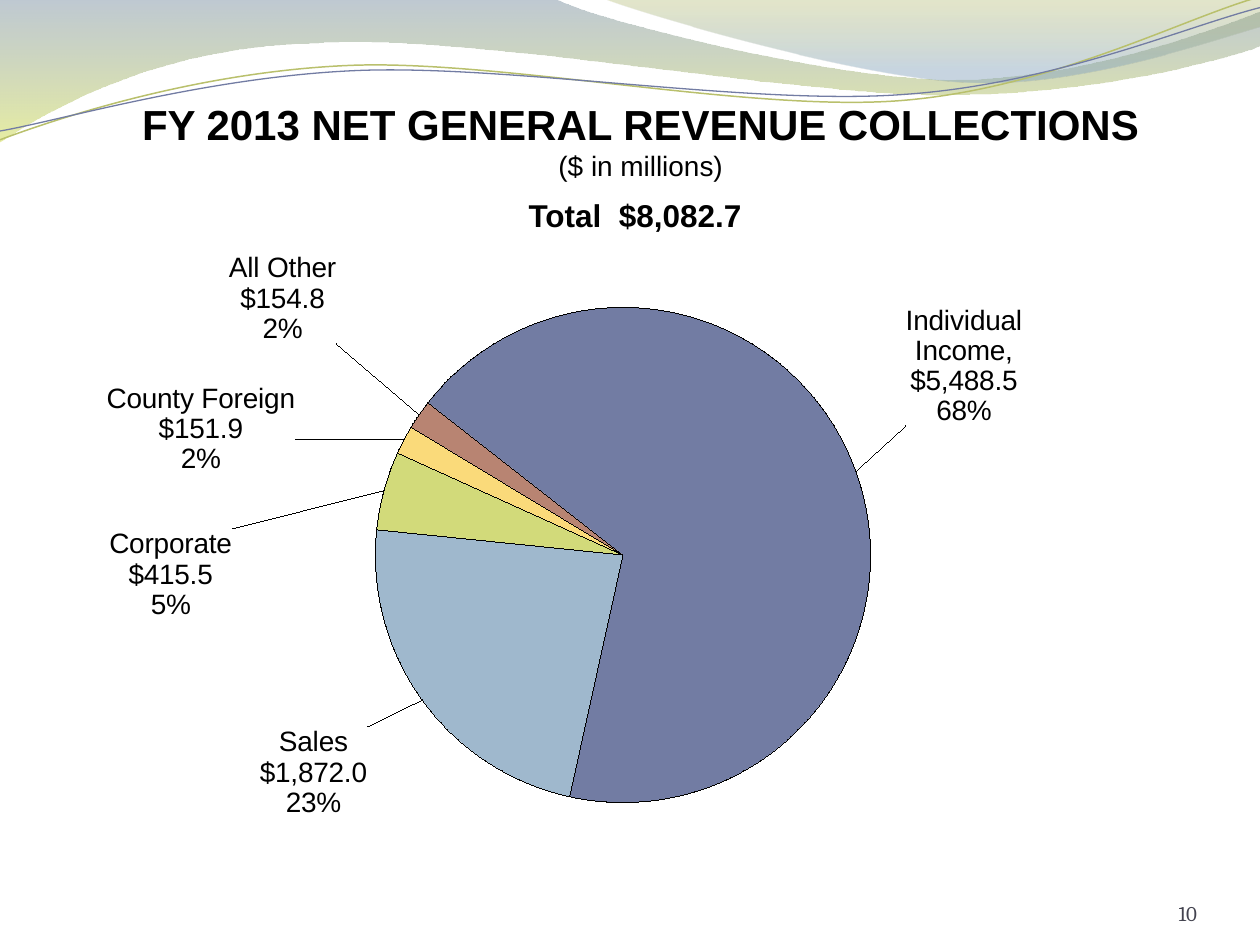
from math import cos, radians, sin

from lxml import etree
from pptx import Presentation
from pptx.chart.data import CategoryChartData as ChartData
from pptx.dml.color import RGBColor as RGB
from pptx.enum.chart import XL_CHART_TYPE as Kind, XL_LABEL_POSITION as Spot
from pptx.enum.text import MSO_ANCHOR as Anchor, MSO_AUTO_SIZE as Fit, PP_ALIGN as Align
from pptx.oxml import parse_xml
from pptx.oxml.ns import nsdecls, qn
from pptx.util import Inches, Pt

HEX = {
    "black": "000000", "page": "43434F",
    "slate": "72889B", "lime": "D3DE57", "olive": "A4AC50", "sky": "84A3BD",
    "moss": "B9C06C", "indigo": "727CA3", "blue": "9FB8CD",
    "green": "D2DA7A", "gold": "FADA7A", "rust": "B88472",
}

# Category, value, slice colour, label lines, label shift in inches
SLICES = [
    ("Individual Income", 5488.5, "indigo",
     ["Individual", "Income,", "$5,488.5", "68%"], (0.34, -0.34)),
    ("Sales", 1872.0, "blue", ["Sales", "$1,872.0", "23%"], (-0.39, 0.18)),
    ("Corporate", 415.5, "green", ["Corporate", "$415.5", "5%"], (-1.15, 1.04)),
    ("County Foreign", 151.9, "gold",
     ["County Foreign", "$151.9", "2%"], (-0.81, 0.3)),
    ("All Other", 154.8, "rust", ["All Other", "$154.8", "2%"], (-0.61, -0.53)),
]

# A pair is a corner; six numbers are a curve's two handles and its end
WAVE = [(0, 0), (4.4, -0.01), (4.76, 0.17, 6.64, 0.63, 7.58, 0.63),
        (8.53, 0.63, 9.58, 0.26, 10, 0.09), (10.01, 0.36),
        (9.83, 0.44, 8.7, 0.76, 7.46, 0.75), (6.22, 0.75, 3.82, 0.28, 2.57, 0.34),
        (1.29, 0.36, 0.46, 0.83, -0.01, 1.13), (0, 0)]
CREST = [(4.79, -0.01), (5.09, 0.11, 6.82, 0.62, 7.69, 0.65),
         (8.56, 0.69, 9.61, 0.32, 10, 0.21), (10, 0), (4.79, -0.01)]
UPPER = [(0, 1.11), (0.48, 0.93, 1.58, 0.57, 2.77, 0.52),
         (3.95, 0.47, 5.93, 0.89, 7.13, 0.8), (8.33, 0.71, 9.38, 0.15, 9.98, -0.02)]
LOWER = [(0, 1.04), (0.47, 0.96, 1.64, 0.61, 2.83, 0.56),
         (4.03, 0.51, 5.97, 0.84, 7.17, 0.75), (8.36, 0.67, 9.41, 0.21, 10, 0.06)]
TILT = -2.7


def rgb(name):
    return RGB.from_string(HEX[name])


def write(para, text, size=16, color="black", font="Arial", bold=False,
          align=Align.CENTER):
    para.alignment = align
    run = para.add_run()
    run.text = text
    face = run.font
    face.size, face.name, face.bold = Pt(size), font, bold
    face.color.rgb = rgb(color)


def place(shape, box):
    shape.left, shape.top, shape.width, shape.height = map(Inches, box)


def outline(shapes, box, steps, close=False, turn=0):
    """Draw corners and curves in box; turn is the shape's own rotation."""
    left, top, wide, high = box
    pen = shapes.build_freeform(Inches(left), Inches(top))
    pen.add_line_segments([(Inches(left + wide), Inches(top)),
                           (Inches(left + wide), Inches(top + high))], close=close)
    shape = pen.convert_to_shape()
    shape.shadow.inherit = False
    shape.rotation = turn % 360
    c, s = cos(radians(-turn)), sin(radians(-turn))

    def local(x, y):
        dx, dy = x - left - wide / 2, y - top - high / 2
        return Inches(dx * c - dy * s + wide / 2), Inches(dx * s + dy * c + high / 2)

    track = next(shape._element.iter(qn("a:path")))
    for old in list(track):
        track.remove(old)
    for i, step in enumerate(steps):
        tag = "a:cubicBezTo" if len(step) == 6 else "a:lnTo" if i else "a:moveTo"
        node = etree.SubElement(track, qn(tag))
        for x, y in zip(step[::2], step[1::2]):
            px, py = local(x, y)
            etree.SubElement(node, qn("a:pt"), x=str(px), y=str(py))
    if close:
        etree.SubElement(track, qn("a:close"))
    return shape


def band(shapes, box, steps, stops):
    """Draw a closed shape with a see-through gradient from top to bottom."""
    shape = outline(shapes, box, steps, close=True)
    shape.line.fill.background()
    shape.fill.gradient()
    shape.fill.gradient_angle = 270
    for stop, (pos, name, alpha) in zip(shape.fill.gradient_stops, stops):
        stop.position = pos
        stop.color.rgb = rgb(name)
    tints = shape._element.spPr.iter(qn("a:srgbClr"))
    for tint, (pos, name, alpha) in zip(tints, stops):
        etree.SubElement(tint, qn("a:alpha")).set("val", str(alpha * 1000))


def strand(shapes, box, steps, name, width):
    shape = outline(shapes, box, steps, turn=TILT)
    shape.fill.background()
    shape.line.color.rgb = rgb(name)
    shape.line.width = Pt(width)


def header(slide):
    band(slide.shapes, (-0.01, -0.01, 10.02, 1.14), WAVE,
         [(0, "slate", 45), (1, "lime", 55)])
    band(slide.shapes, (4.79, -0.01, 5.21, 0.7), CREST,
         [(0, "olive", 30), (0.8, "sky", 45)])
    group = slide.shapes.add_group_shape().shapes
    strand(group, (-0.02, 0.22, 10.02, 0.71), UPPER, "moss", 0.85)
    strand(group, (-0.02, 0.3, 10.03, 0.58), LOWER, "indigo", 0.75)


def heading(slide, box):
    title = slide.shapes.title
    place(title, box)
    frame = title.text_frame
    frame.auto_size, frame.vertical_anchor = Fit.NONE, Anchor.TOP
    write(frame.paragraphs[0], "FY 2013 NET GENERAL REVENUE COLLECTIONS",
          size=24, bold=True)
    write(frame.add_paragraph(), "($ in millions)")


def note(slide, box, text, anchor=Anchor.TOP, inset=None, **form):
    shape = slide.shapes.add_textbox(*map(Inches, box))
    frame = shape.text_frame
    frame.word_wrap, frame.vertical_anchor = True, anchor
    if inset is not None:
        frame.margin_left = frame.margin_right = Inches(inset)
        frame.margin_top = frame.margin_bottom = Inches(inset)
    write(frame.paragraphs[0], text, **form)


def layout(x, y, size=()):
    """Make a manual chart layout from shares of the chart's size."""
    parts = [("x", x), ("y", y), *zip("wh", size)]
    head = ('<c:layoutTarget val="inner"/><c:xMode val="edge"/>'
            '<c:yMode val="edge"/>') if size else ""
    body = "".join(f'<c:{k} val="{v:.4f}"/>' for k, v in parts)
    return parse_xml(f'<c:layout {nsdecls("c")}><c:manualLayout>{head}{body}'
                     '</c:manualLayout></c:layout>')


def label(point, lines, shift):
    tag = point.data_label
    frame = tag.text_frame
    for i, line in enumerate(lines):
        write(frame.add_paragraph() if i else frame.paragraphs[0], line)
    tag.position = Spot.BEST_FIT
    tag._get_or_add_dLbl().find(qn("c:idx")).addnext(layout(*shift))


def pie(slide, box, disc):
    """Place the chart in box, with its pie in the disc (left, top, diameter)."""
    data = ChartData(number_format='"$"#,##0.0')
    data.categories = [row[0] for row in SLICES]
    data.add_series("Series 1", [row[1] for row in SLICES])
    chart = slide.shapes.add_chart(Kind.PIE, *map(Inches, box), data).chart
    chart.has_legend = chart.has_title = False
    chart.font.name, chart.font.size = "Cambria", Pt(18)
    chart.font.color.rgb = rgb("black")

    left, top, wide, high = box
    x, y, size = disc
    area = chart._chartSpace.chart.plotArea
    for old in area.findall(qn("c:layout")):
        area.remove(old)
    area.insert(0, layout((x - left) / wide, (y - top) / high,
                          (size / wide, size / high)))

    plot = chart.plots[0]
    plot.vary_by_categories = True
    turn = plot._element.find(qn("c:firstSliceAng"))
    if turn is None:
        turn = etree.SubElement(plot._element, qn("c:firstSliceAng"))
    turn.set("val", "308")

    series = plot.series[0]
    tags = series.data_labels
    tags.show_value = tags.show_percentage = tags.show_category_name = True
    tags.number_format, tags.number_format_is_linked = '"$"#,##0.0', False
    tags.font.name, tags.font.size = "Arial", Pt(16)
    for i, (name, value, color, lines, (dx, dy)) in enumerate(SLICES):
        point = series.points[i]
        point.format.fill.solid()
        point.format.fill.fore_color.rgb = rgb(color)
        point.format.line.color.rgb = rgb("black")
        label(point, lines, (dx / wide, dy / high))


def main():
    deck = Presentation()
    deck.slide_width, deck.slide_height = Inches(10), Inches(7.5)
    slide = deck.slides.add_slide(deck.slide_layouts[5])
    header(slide)
    note(slide, (8.67, 6.95, 0.83, 0.4), "10", anchor=Anchor.BOTTOM, inset=0,
         size=12, font="Cambria", color="page", align=Align.RIGHT)
    note(slide, (3.75, 1.51, 2.58, 0.4), "Total  $8,082.7", size=18, bold=True)
    heading(slide, (0.67, 0.73, 8.83, 0.77))
    pie(slide, (0.83, 2, 8, 4.83), (2.98, 2.44, 3.93))
    deck.save("out.pptx")


if __name__ == "__main__":
    main()
